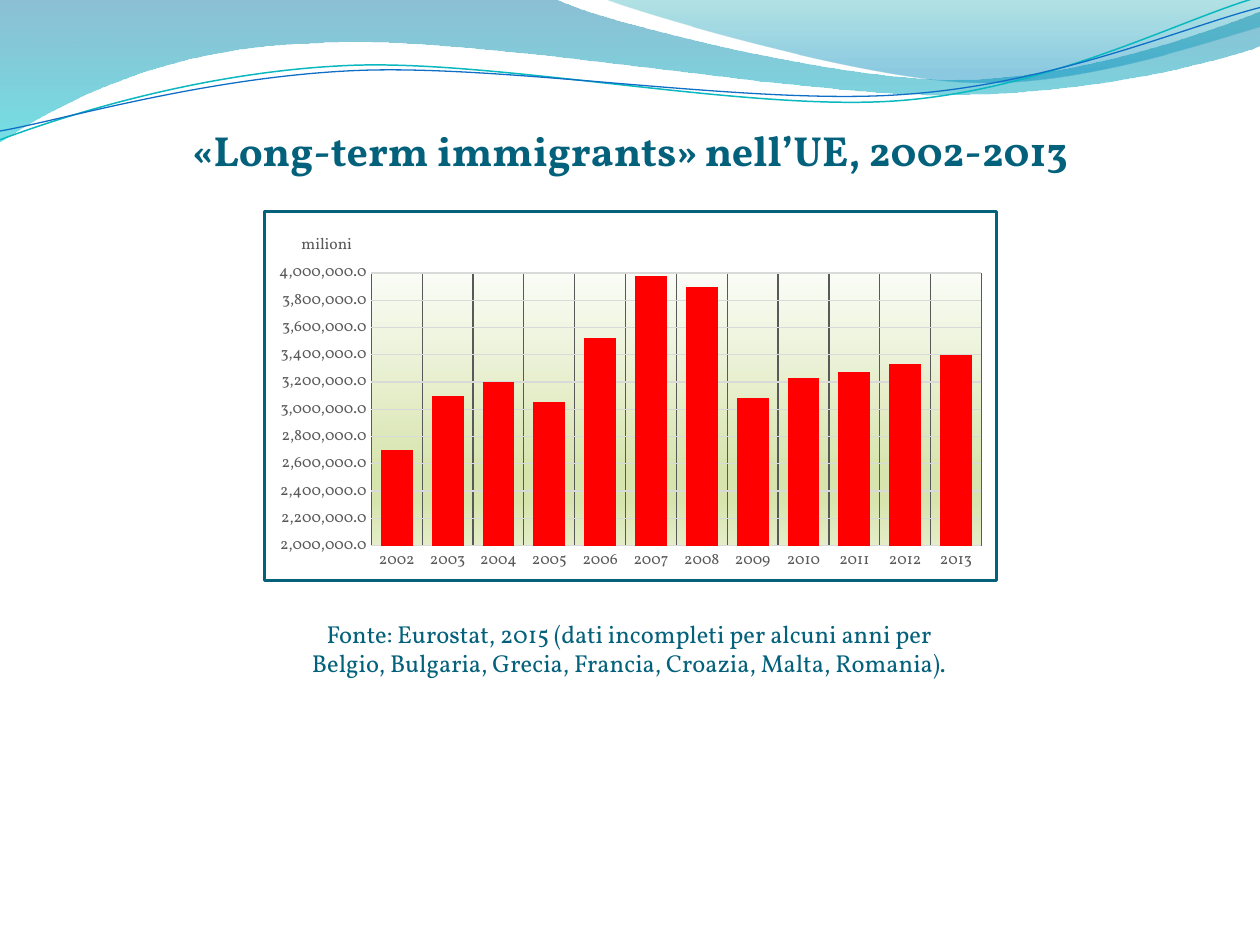
import dataclasses
import lxml.etree
import pptx
import pptx.chart.data
import pptx.dml.color
import pptx.enum.chart
import pptx.enum.text
import pptx.oxml
import pptx.oxml.ns
import pptx.util
from pptx.util import Inches

qn = pptx.oxml.ns.qn


@dataclasses.dataclass(frozen=True)
class Theme:
    font: str = "Vollkorn"
    accent: str = "04617B"
    label: str = "595959"
    grid: str = "D9D9D9"
    bar: str = "FF0000"
    paper: str = "FFFFFF"
    text: str = "000000"
    teal_line: str = "0AB8BF"
    blue_line: str = "0F6FC6"
    title_size: int = 24
    source_size: int = 14
    chart_size: int = 10
    label_size: int = 9
    # Gradient stops: position, colour, opacity in percent
    wide_wave: tuple = ((0, "0074A1", 45), (100, "00C6CF", 55))
    right_wave: tuple = ((0, "00A1A9", 30), (80, "008BBF", 45))
    plot: tuple = ((0, "FAFCF6", 100), (74, "D7E4AD", 100),
                   (83, "D7E4AD", 100), (100, "E4EDC8", 100))


THEME = Theme()
IMMIGRANTS = {
    "2002": 2700000, "2003": 3100000, "2004": 3200000, "2005": 3050000,
    "2006": 3520000, "2007": 3980000, "2008": 3900000, "2009": 3080000,
    "2010": 3230000, "2011": 3270000, "2012": 3330000, "2013": 3400000,
}


def rgb(code):
    return pptx.dml.color.RGBColor.from_string(code)


def format_font(font, size, color, bold=False):
    font.name, font.size, font.bold = THEME.font, pptx.util.Pt(size), bold
    font.color.rgb = rgb(color)


def write_text(frame, text, *, size, color, bold=False):
    """Write one centred paragraph into a text frame."""
    frame.word_wrap = True
    frame.auto_size = pptx.enum.text.MSO_AUTO_SIZE.NONE
    frame.vertical_anchor = pptx.enum.text.MSO_ANCHOR.MIDDLE
    para = frame.paragraphs[0]
    para.alignment = pptx.enum.text.PP_ALIGN.CENTER
    span = para.add_run()
    span.text = text
    format_font(span.font, size, color, bold)


def gradient(stops):
    """Return a top-to-bottom gradient fill element."""
    fill = pptx.oxml.parse_xml(f'<a:gradFill {pptx.oxml.ns.nsdecls("a")} rotWithShape="1"/>')
    stop_list = lxml.etree.SubElement(fill, qn("a:gsLst"))
    for position, color, opacity in stops:
        stop = lxml.etree.SubElement(stop_list, qn("a:gs"), pos=str(position * 1000))
        shade = lxml.etree.SubElement(stop, qn("a:srgbClr"), val=color)
        if opacity < 100:
            lxml.etree.SubElement(shade, qn("a:alpha"), val=str(opacity * 1000))
    lxml.etree.SubElement(fill, qn("a:lin"), ang="5400000", scaled="0")
    return fill


def add_outline(page, origin, start, segments, *, stops=None, line=None, width=0.75):
    """Draw segments of one point (straight) or three points (cubic curve)."""
    points = [(Inches(origin[0] + x), Inches(origin[1] + y))
              for x, y in [start] + [point for segment in segments for point in segment]]
    builder = page.shapes.build_freeform(*points[0])
    builder.add_line_segments(points[1:], close=stops is not None)
    shape = builder.convert_to_shape()
    shape.shadow.inherit = False

    # Join each run of three points into one curve
    steps = iter(list(shape.element.iter(qn("a:lnTo"))))
    for segment in segments:
        first, *others = [next(steps) for _ in segment]
        if others:
            cubic = lxml.etree.Element(qn("a:cubicBezTo"))
            first.addprevious(cubic)
            for step in (first, *others):
                cubic.append(step[0])
                step.getparent().remove(step)

    if stops:
        shape.fill.solid()
        solid = shape.element.spPr.find(qn("a:solidFill"))
        solid.getparent().replace(solid, gradient(stops))
        shape.line.fill.background()
    else:
        shape.fill.background()
        shape.line.color.rgb = rgb(line)
        shape.line.width = pptx.util.Pt(width)


def add_waves(page, origin):
    """Draw the header waves from the given left and top."""
    add_outline(page, origin, (0, 0), [
        [(4.4, -0.01)],
        [(4.76, 0.17), (6.64, 0.63), (7.58, 0.63)],
        [(8.53, 0.63), (9.58, 0.26), (10, 0.09)],
        [(10.01, 0.36)],
        [(9.83, 0.44), (8.7, 0.76), (7.46, 0.75)],
        [(6.22, 0.75), (3.82, 0.28), (2.57, 0.34)],
        [(1.29, 0.36), (0.46, 0.83), (-0.01, 1.13)],
    ], stops=THEME.wide_wave)
    add_outline(page, origin, (4.79, -0.01), [
        [(5.09, 0.11), (6.82, 0.62), (7.69, 0.65)],
        [(8.56, 0.69), (9.61, 0.32), (10, 0.21)],
        [(10, 0)],
    ], stops=THEME.right_wave)
    add_outline(page, origin, (0, 1.11), [
        [(0.48, 0.93), (1.58, 0.57), (2.77, 0.52)],
        [(3.95, 0.47), (5.93, 0.89), (7.13, 0.8)],
        [(8.33, 0.71), (9.38, 0.15), (9.98, -0.02)],
    ], line=THEME.teal_line, width=0.85)
    add_outline(page, origin, (0, 1.04), [
        [(0.47, 0.96), (1.64, 0.61), (2.83, 0.56)],
        [(4.03, 0.51), (5.97, 0.84), (7.17, 0.75)],
        [(8.36, 0.67), (9.41, 0.21), (10, 0.06)],
    ], line=THEME.blue_line)


def add_title(page, box):
    title = page.shapes.title
    title.left, title.top, title.width, title.height = map(Inches, box)
    write_text(title.text_frame, "«Long-term immigrants» nell’UE, 2002-2013",
               size=THEME.title_size, color=THEME.accent, bold=True)


def add_source(page, box):
    note = page.shapes.add_textbox(*map(Inches, box))
    write_text(note.text_frame,
               "Fonte: Eurostat, 2015 (dati incompleti per alcuni anni per "
               "Belgio, Bulgaria, Grecia, Francia, Croazia, Malta, Romania).",
               size=THEME.source_size, color=THEME.accent)


def chart_format():
    return pptx.oxml.parse_xml(f'<c:spPr {pptx.oxml.ns.nsdecls("c", "a")}/>')


def set_layout(parent, index, **places):
    """Fix the position of a chart part, in fractions of the chart."""
    for old in parent.findall(qn("c:layout")):
        parent.remove(old)
    layout = pptx.oxml.parse_xml(f'<c:layout {pptx.oxml.ns.nsdecls("c")}/>')
    manual = lxml.etree.SubElement(layout, qn("c:manualLayout"))
    for tag, value in places.items():
        lxml.etree.SubElement(manual, qn(f"c:{tag}"), val=str(value))
    parent.insert(index, layout)


def style_axis(axis, grid_color):
    axis.major_tick_mark = axis.minor_tick_mark = pptx.enum.chart.XL_TICK_MARK.NONE
    axis.format.line.fill.background()
    axis.has_major_gridlines = True
    axis.major_gridlines.format.line.color.rgb = rgb(grid_color)
    axis.major_gridlines.format.line.width = pptx.util.Pt(0.75)
    format_font(axis.tick_labels.font, THEME.label_size, THEME.label)


def add_immigrant_chart(page, box):
    data = pptx.chart.data.CategoryChartData()
    data.categories = list(IMMIGRANTS)
    data.add_series("Series 1", list(IMMIGRANTS.values()))
    chart = page.shapes.add_chart(pptx.enum.chart.XL_CHART_TYPE.COLUMN_CLUSTERED,
                                  *map(Inches, box), data).chart
    width, height = box[2:]
    chart.has_legend = False
    format_font(chart.font, THEME.chart_size, THEME.text)

    # Unit above the value axis
    chart.has_title = True
    span = chart.chart_title.text_frame.paragraphs[0].add_run()
    span.text = "milioni"
    format_font(span.font, THEME.label_size, THEME.label)
    set_layout(chart.chart_title._element, 1, xMode="edge", yMode="edge",
               x=0.27 / width, y=0.15 / height)

    # Axes and bars
    style_axis(chart.category_axis, THEME.label)
    values = chart.value_axis
    style_axis(values, THEME.grid)
    values.minimum_scale, values.maximum_scale, values.major_unit = 2000000, 4000000, 200000
    values.tick_labels.number_format = "#,##0.0"
    values.tick_labels.number_format_is_linked = False
    plot = chart.plots[0]
    plot.gap_width, plot.vary_by_categories = 60, False
    plot.series[0].format.fill.solid()
    plot.series[0].format.fill.fore_color.rgb = rgb(THEME.bar)

    # Plot background and frame
    area = chart._chartSpace.chart.plotArea
    set_layout(area, 0, layoutTarget="inner", xMode="edge", yMode="edge",
               x=0.85 / width, y=0.49 / height, w=4.86 / width, h=2.18 / height)
    backdrop = chart_format()
    backdrop.append(gradient(THEME.plot))
    area.append(backdrop)
    frame = chart_format()
    line = lxml.etree.Element(qn("a:ln"), w=str(pptx.util.Pt(1.5)))
    for parent, color in ((frame, THEME.paper), (line, THEME.accent)):
        solid = lxml.etree.SubElement(parent, qn("a:solidFill"))
        lxml.etree.SubElement(solid, qn("a:srgbClr"), val=color)
    frame.append(line)
    chart._chartSpace.chart.addnext(frame)


def main():
    deck = pptx.Presentation()
    deck.slide_width, deck.slide_height = Inches(10), Inches(7.5)
    page = deck.slides.add_slide(deck.slide_layouts[5])
    add_waves(page, (0, 0))
    add_title(page, (0, 0.94, 10, 0.5))
    add_source(page, (2.26, 4.86, 5.47, 0.57))
    add_immigrant_chart(page, (2.09, 1.67, 5.83, 2.95))
    deck.save("out.pptx")


if __name__ == "__main__":
    main()
